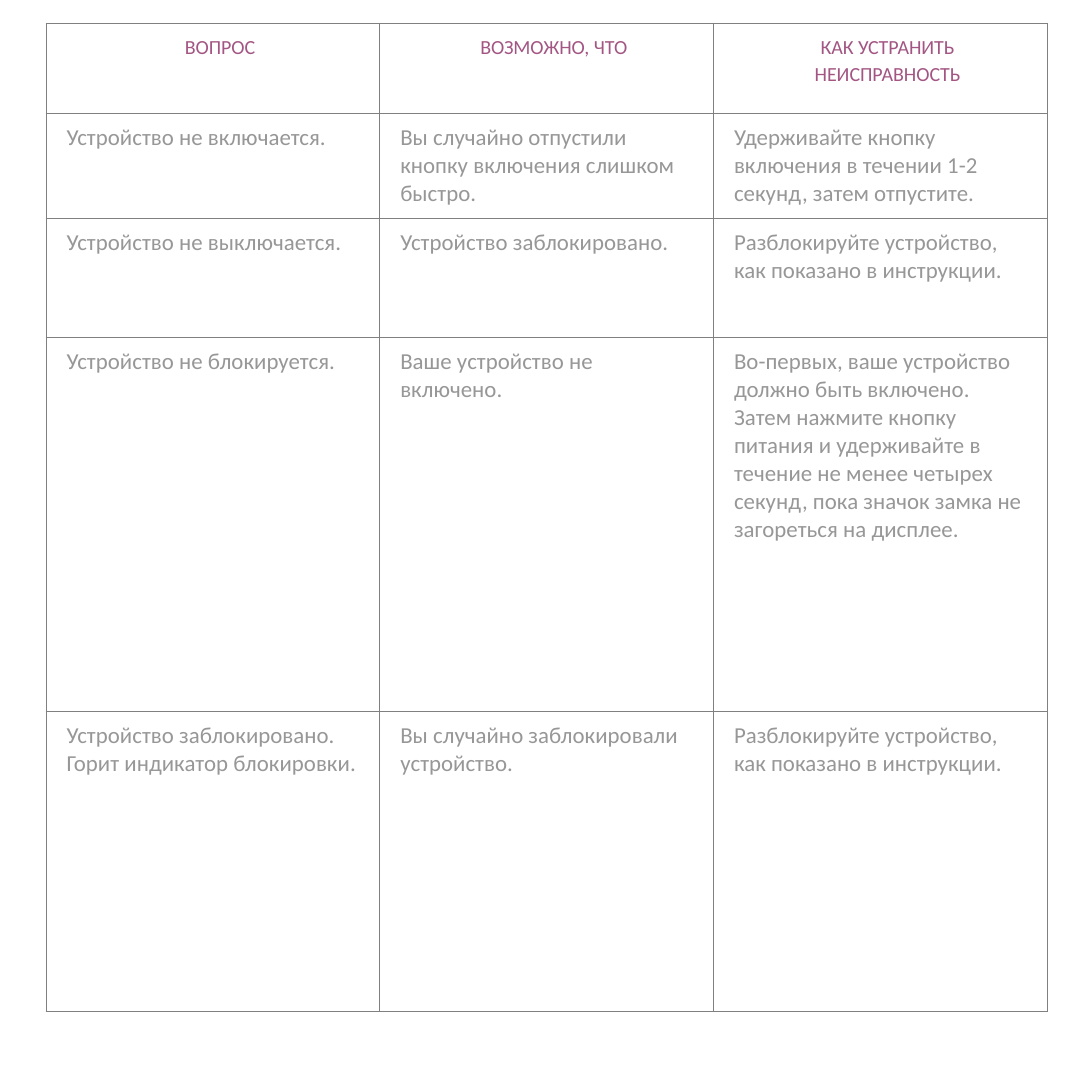
from dataclasses import dataclass

from pptx import Presentation
from pptx import util as u
from pptx.dml.color import RGBColor
from pptx.enum import text
from pptx.oxml import parse_xml
from pptx.oxml.ns import nsdecls
from pptx.table import _Cell


@dataclass(frozen=True)
class Theme:
    font: str = "Calibri"
    heading_color: str = "A35683"
    answer_color: str = "979797"
    border_color: str = "808080"
    heading_size: float = 7
    answer_size: float = 8
    border_width: float = 0.25


@dataclass(frozen=True)
class Row:
    height: float
    question: str
    cause: str
    remedy: str


THEME = Theme()
SLIDE_SIDE = 382.32
TABLE_LEFT, TABLE_TOP = 16.1, 8.05
COLUMN_WIDTH = 116.85
HEADING_INDENT = 5

# Troubleshooting guide: headings first, then one row per fault
UNLOCK = "Разблокируйте устройство, как показано в инструкции."
GUIDE = [
    Row(31.5, "ВОПРОС", "ВОЗМОЖНО, ЧТО", "КАК УСТРАНИТЬ НЕИСПРАВНОСТЬ"),
    Row(36, "Устройство не включается.",
        "Вы случайно отпустили кнопку включения слишком быстро.",
        "Удерживайте кнопку включения в течении 1-2 секунд, затем отпустите."),
    Row(41.7, "Устройство не выключается.", "Устройство заблокировано.", UNLOCK),
    Row(131, "Устройство не блокируется.", "Ваше устройство не включено.",
        "Во-первых, ваше устройство должно быть включено. Затем нажмите кнопку "
        "питания и удерживайте в течение не менее четырех секунд, пока значок "
        "замка не загореться на дисплее."),
    Row(105, "Устройство заблокировано. Горит индикатор блокировки.",
        "Вы случайно заблокировали устройство.", UNLOCK),
]

# Formats for the two kinds of cell
HEADING_FONT = {"name": THEME.font, "size": u.Pt(THEME.heading_size), "bold": False}
ANSWER_FONT = {"name": THEME.font, "size": u.Pt(THEME.answer_size), "bold": False}
HEADING_PARAGRAPH = {"alignment": text.PP_ALIGN.CENTER, "line_spacing": 1.1}
ANSWER_PARAGRAPH = {"alignment": text.PP_ALIGN.LEFT}


def add_borders(cell: _Cell) -> None:
    properties = cell._tc.get_or_add_tcPr()
    for side in ("lnL", "lnR", "lnT", "lnB"):
        properties.append(parse_xml(
            f'<a:{side} {nsdecls("a")} w="{u.Pt(THEME.border_width)}"><a:solidFill>'
            f'<a:srgbClr val="{THEME.border_color}"/></a:solidFill></a:{side}>'))


def fill_cell(cell: _Cell, wording: str, is_heading: bool) -> None:
    add_borders(cell)
    cell.fill.background()
    line = cell.text_frame.paragraphs[0]
    for name, value in (HEADING_PARAGRAPH if is_heading else ANSWER_PARAGRAPH).items():
        setattr(line, name, value)
    if is_heading:
        line._p.get_or_add_pPr().set("marL", str(u.Pt(HEADING_INDENT)))
    phrase = line.add_run()
    phrase.text = wording
    for name, value in (HEADING_FONT if is_heading else ANSWER_FONT).items():
        setattr(phrase.font, name, value)
    color = THEME.heading_color if is_heading else THEME.answer_color
    phrase.font.color.rgb = RGBColor.from_string(color)


def main() -> None:
    deck = Presentation()
    deck.slide_width = deck.slide_height = u.Pt(SLIDE_SIDE)
    page = deck.slides.add_slide(deck.slide_layouts[6])

    # Table frame without banding
    guide = page.shapes.add_table(
        len(GUIDE), 3, u.Pt(TABLE_LEFT), u.Pt(TABLE_TOP),
        u.Pt(3 * COLUMN_WIDTH), u.Pt(sum(row.height for row in GUIDE))).table
    guide.first_row = guide.horz_banding = False
    for column in guide.columns:
        column.width = u.Pt(COLUMN_WIDTH)

    # Cells
    for index, row in enumerate(GUIDE):
        guide.rows[index].height = u.Pt(row.height)
        for column, wording in enumerate((row.question, row.cause, row.remedy)):
            fill_cell(guide.cell(index, column), wording, index == 0)

    deck.save("out.pptx")


if __name__ == "__main__":
    main()
